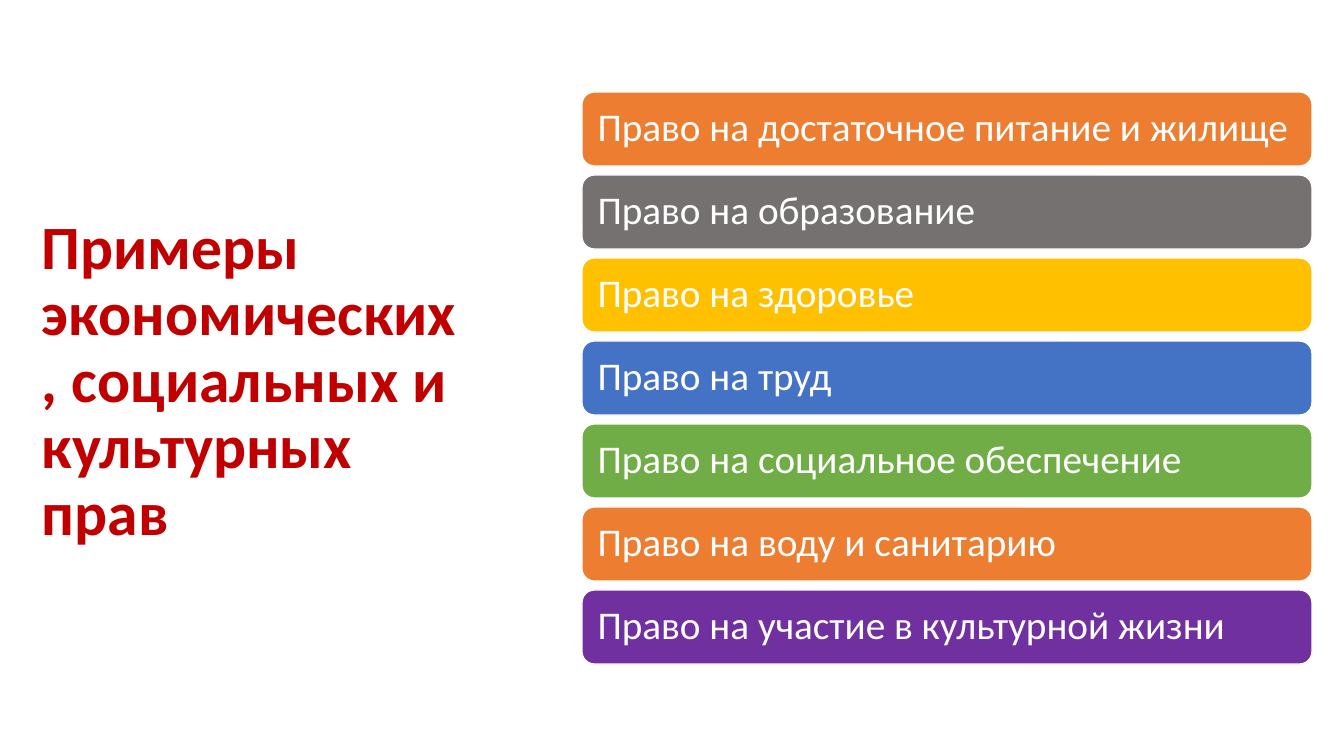
from pptx import Presentation
from pptx.dml.color import RGBColor
from pptx.enum.shapes import MSO_SHAPE
from pptx.enum.text import MSO_ANCHOR, MSO_AUTO_SIZE, PP_ALIGN
from pptx.util import Emu, Pt

ROUNDED = MSO_SHAPE.ROUNDED_RECTANGLE
MIDDLE = MSO_ANCHOR.MIDDLE
NO_FIT = MSO_AUTO_SIZE.NONE
LEFT = PP_ALIGN.LEFT
TITLE_ONLY = 5

FONT = "Calibri"
WHITE = RGBColor(0xFF, 0xFF, 0xFF)
RED = RGBColor(0xC0, 0x00, 0x00)
ORANGE = RGBColor(0xED, 0x7D, 0x31)
GRAY = RGBColor(0x76, 0x71, 0x71)
YELLOW = RGBColor(0xFF, 0xC0, 0x00)
BLUE = RGBColor(0x44, 0x72, 0xC4)
GREEN = RGBColor(0x70, 0xAD, 0x47)
PURPLE = RGBColor(0x70, 0x30, 0xA0)

HEADING = "Примеры экономических, социальных и культурных прав"
RIGHTS = [
    ("Право на достаточное питание и жилище", ORANGE),
    ("Право на образование", GRAY),
    ("Право на здоровье", YELLOW),
    ("Право на труд", BLUE),
    ("Право на социальное обеспечение", GREEN),
    ("Право на воду и санитарию", ORANGE),
    ("Право на участие в культурной жизни", PURPLE),
]


def px(length):
    return Emu(round(length * 914400 / 100.8))


def write(frame, text, size, color, bold, inset_x, inset_y):
    frame.word_wrap = True
    frame.auto_size = NO_FIT
    frame.vertical_anchor = MIDDLE
    frame.margin_left = frame.margin_right = px(inset_x)
    frame.margin_top = frame.margin_bottom = px(inset_y)
    paragraph = frame.paragraphs[0]
    paragraph.alignment = LEFT
    paragraph.line_spacing = 0.9
    run = paragraph.add_run()
    run.text = text
    run.font.name = FONT
    run.font.size = Pt(size)
    run.font.bold = bold
    run.font.color.rgb = color


def place_heading(slide, left, top, width, height):
    heading = slide.shapes.title
    heading.left, heading.top = px(left), px(top)
    heading.width, heading.height = px(width), px(height)
    write(heading.text_frame, HEADING, 44, RED, True, 10, 5)


def place_rights(slide, left, top, width, height, gap):
    bar_height = (height - gap * (len(RIGHTS) - 1)) / len(RIGHTS)
    for index, (right, color) in enumerate(RIGHTS):
        bar_top = top + index * (bar_height + gap)
        bar = slide.shapes.add_shape(
            ROUNDED, px(left), px(bar_top), px(width), px(bar_height))
        bar.shadow.inherit = False
        bar.fill.solid()
        bar.fill.fore_color.rgb = color
        bar.line.color.rgb = WHITE
        bar.line.width = Pt(1)
        write(bar.text_frame, right, 28, WHITE, False, 12, 12)


def main():
    deck = Presentation()
    deck.slide_width, deck.slide_height = px(1344), px(756)
    slide = deck.slides.add_slide(deck.slide_layouts[TITLE_ONLY])
    place_heading(slide, 32, 79, 444, 607)
    place_rights(slide, 582, 92, 730, 572, 9)
    deck.save("out.pptx")


if __name__ == "__main__":
    main()
